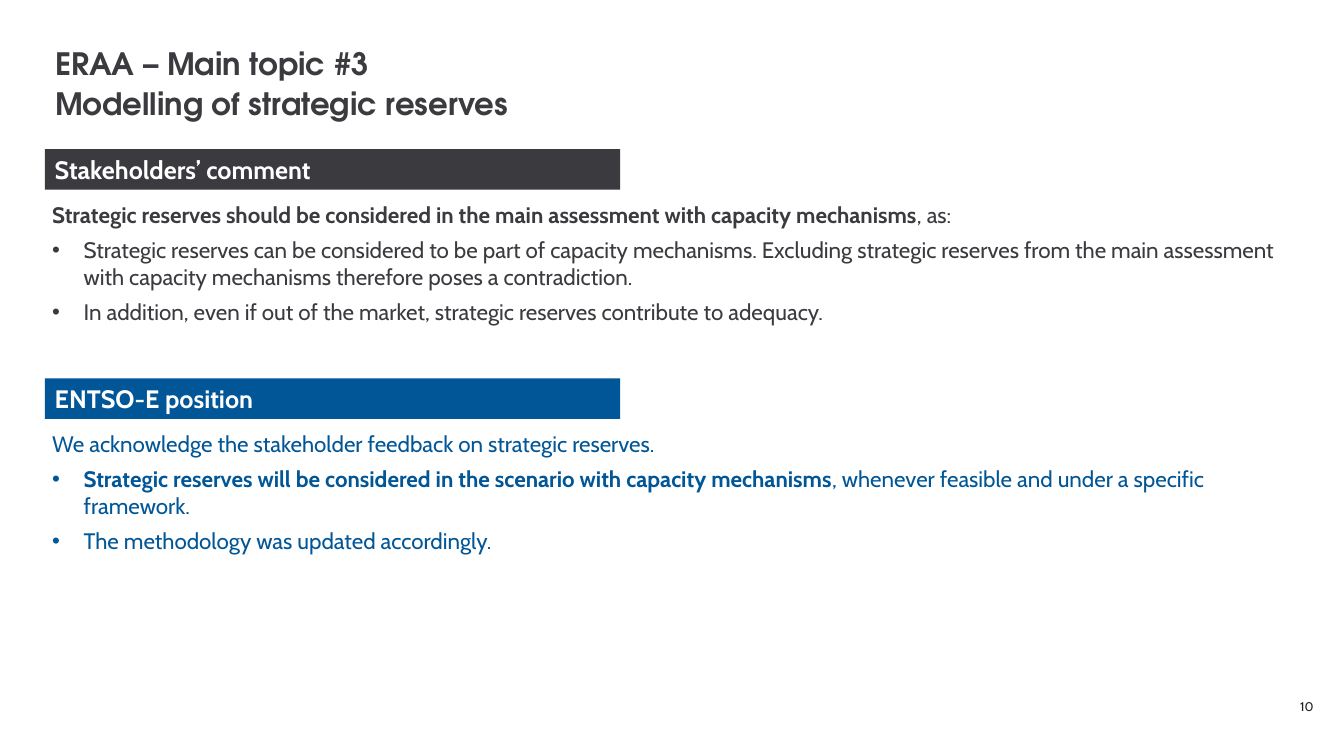
from pptx import Presentation
from pptx.dml.color import RGBColor
from pptx.enum.shapes import MSO_SHAPE
from pptx.enum.text import MSO_ANCHOR, PP_ALIGN
from pptx.oxml.ns import qn
from pptx.util import Pt
from lxml import etree

CHARCOAL = RGBColor(0x3A, 0x3A, 0x3F)
BLUE = RGBColor(0x00, 0x56, 0x96)
WHITE = RGBColor(0xFF, 0xFF, 0xFF)
BLACK = RGBColor(0x1D, 0x1D, 0x20)
RECTANGLE = MSO_SHAPE.RECTANGLE
TOP, MIDDLE = MSO_ANCHOR.TOP, MSO_ANCHOR.MIDDLE
LEFT, RIGHT = PP_ALIGN.LEFT, PP_ALIGN.RIGHT
BODY_FONT = "Cabin"
TITLE_FONT = "TeX Gyre Adventor"
BULLET_INDENT = Pt(22.5)

STAKEHOLDER_COMMENT = [
    (False, [("Strategic reserves should be considered in the main assessment "
              "with capacity mechanisms", True), (", as:", False)]),
    (True, [("Strategic reserves can be considered to be part of capacity mechanisms. "
             "Excluding strategic reserves from the main assessment with capacity "
             "mechanisms therefore poses a contradiction.", False)]),
    (True, [("In addition, even if out of the market, strategic reserves contribute "
             "to adequacy.", False)]),
]
POSITION = [
    (False, [("We acknowledge the stakeholder feedback on strategic reserves.", False)]),
    (True, [("Strategic reserves will be considered in the scenario with capacity "
             "mechanisms", True),
            (", whenever feasible and under a specific framework.", False)]),
    (True, [("The methodology was updated accordingly.", False)]),
]


def plain(text, bold=False):
    """Return an unbulleted paragraph holding one run."""
    return False, [(text, bold)]


def add_bullet(paragraph):
    """Give a paragraph a hanging bullet."""
    properties = paragraph._p.get_or_add_pPr()
    properties.set("marL", str(BULLET_INDENT))
    properties.set("indent", str(-BULLET_INDENT))
    etree.SubElement(properties, qn("a:buFont")).set("typeface", "Arial")
    etree.SubElement(properties, qn("a:buChar")).set("char", "•")


def write_text(shape, paragraphs, *, size, color, font=BODY_FONT, align=LEFT,
               anchor=TOP, line_spacing=None, before=0, after=0):
    """Write formatted paragraphs into a shape."""
    frame = shape.text_frame
    frame.word_wrap = True
    frame.vertical_anchor = anchor
    for index, (bulleted, runs) in enumerate(paragraphs):
        paragraph = frame.add_paragraph() if index else frame.paragraphs[0]
        paragraph.alignment = align
        paragraph.line_spacing = line_spacing
        paragraph.space_before = Pt(before if index else 0)
        paragraph.space_after = Pt(after)
        if bulleted:
            add_bullet(paragraph)
        for text, bold in runs:
            run = paragraph.add_run()
            run.text = text
            run.font.name = font
            run.font.size = Pt(size)
            run.font.bold = bold
            run.font.color.rgb = color


def add_title(slide, left, top, width, height):
    """Place the two-line slide title."""
    title = slide.shapes.add_textbox(Pt(left), Pt(top), Pt(width), Pt(height))
    lines = [plain("ERAA – Main topic #3", True),
             plain("Modelling of strategic reserves", True)]
    write_text(title, lines, size=22, color=CHARCOAL, font=TITLE_FONT,
               line_spacing=0.7, before=10)


def add_section(slide, left, top, width, height, *, heading, body, color):
    """Place a heading bar and its body text below it."""
    bar_width, bar_height, body_offset = 411, 29, 33.4
    bar = slide.shapes.add_shape(RECTANGLE, Pt(left + 1.8), Pt(top),
                                 Pt(bar_width), Pt(bar_height))
    bar.shadow.inherit = False
    bar.fill.solid()
    bar.fill.fore_color.rgb = color
    bar.line.fill.background()
    write_text(bar, [plain(heading, True)], size=18, color=WHITE, anchor=MIDDLE)
    text_box = slide.shapes.add_textbox(Pt(left), Pt(top + body_offset),
                                        Pt(width), Pt(height - body_offset))
    write_text(text_box, body, size=16, color=color, after=6)


def add_page_number(slide, left, top, width, height):
    """Place the page number at the right of the footer."""
    number = slide.shapes.add_textbox(Pt(left), Pt(top), Pt(width), Pt(height))
    write_text(number, [plain("10")], size=9, color=BLACK, align=RIGHT,
               anchor=MIDDLE, line_spacing=Pt(9))


def main():
    """Build and save the slide."""
    presentation = Presentation()
    presentation.slide_width, presentation.slide_height = Pt(960), Pt(540)
    slide = presentation.slides.add_slide(presentation.slide_layouts[6])
    add_title(slide, 32.4, 36, 878.4, 55.4)
    add_section(slide, 30.2, 106.5, 900, 130.6, heading="Stakeholders’ comment",
                body=STAKEHOLDER_COMMENT, color=CHARCOAL)
    add_section(slide, 30.2, 270.2, 900, 130.6, heading="ENTSO-E position",
                body=POSITION, color=BLUE)
    add_page_number(slide, 486, 491, 459.4, 28.8)
    presentation.save("out.pptx")


if __name__ == "__main__":
    main()
